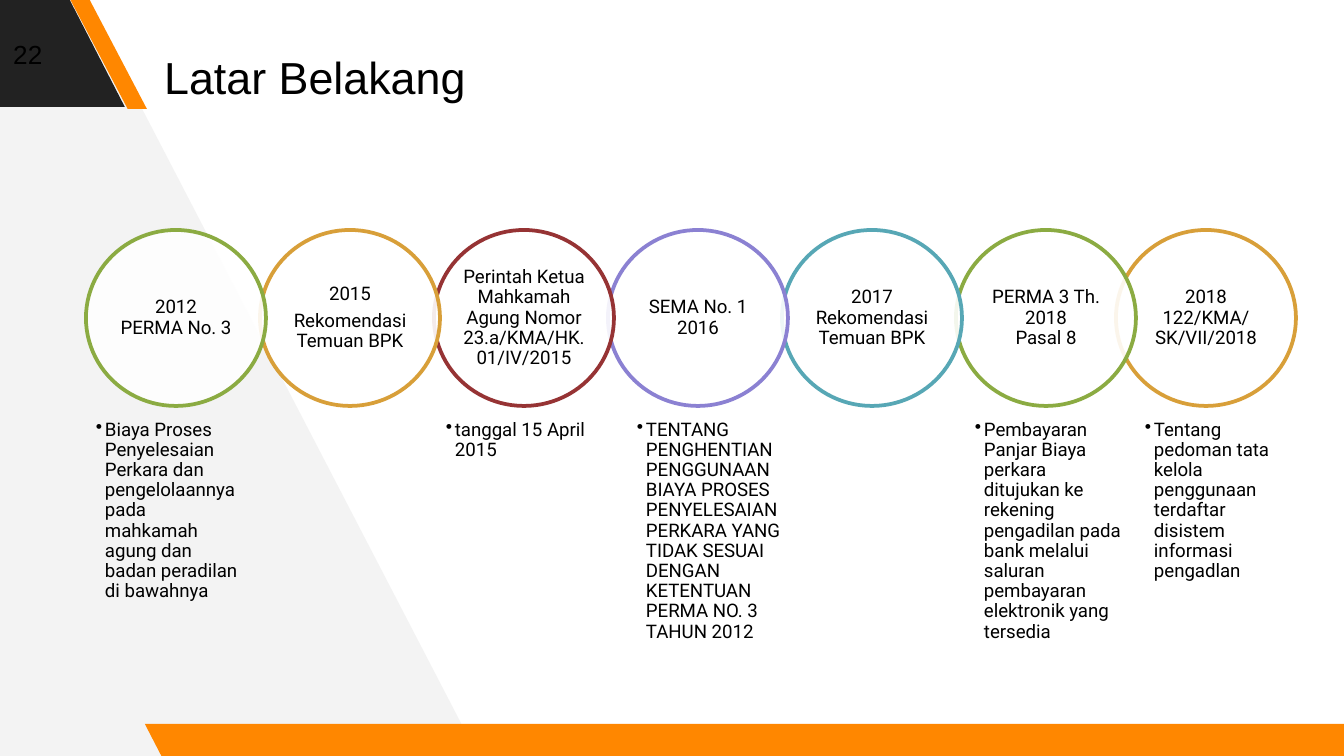
"""Build the "Latar Belakang" timeline slide."""
from lxml.etree import SubElement
from pptx import Presentation
from pptx.dml.color import RGBColor
from pptx.enum.shapes import MSO_SHAPE
from pptx.enum.text import MSO_ANCHOR, PP_ALIGN
from pptx.oxml.ns import qn
from pptx.util import Emu, Pt

SCALE = 914400 / 134.4
COLORS = {
    "white": "FFFFFF", "black": "000000", "pale": "F3F3F3", "dark": "222222",
    "orange": "FF8700", "green": "8BAB42", "gold": "D89F39", "red": "963334",
    "violet": "8B81D2", "teal": "57A7B5",
}
BACKDROP = [(478, 756), (83, -5), (-8, -5), (-3, 761)]
BANDS = [
    ((-133, -3, 258, 110), 0.515, "dark"),
    ((70, -1, 77, 110), 0.75, "orange"),
    ((145, 724, 1230, 34), 0.515, "orange"),
]
STAGES = [
    ("green", "2012\vPERMA No. 3", 91,
     "Biaya Proses Penyelesaian Perkara dan pengelolaannya pada "
     "mahkamah agung dan badan peradilan di bawahnya"),
    ("gold", "2015\nRekomendasi Temuan BPK", None, None),
    ("red", "Perintah Ketua Mahkamah Agung Nomor 23.a/KMA/HK.01/IV/2015", 441,
     "tanggal 15 April 2015"),
    ("violet", "SEMA No. 1 2016", 632,
     "TENTANG PENGHENTIAN PENGGUNAAN BIAYA PROSES PENYELESAIAN PERKARA "
     "YANG TIDAK SESUAI DENGAN KETENTUAN PERMA NO. 3 TAHUN 2012"),
    ("teal", "2017\vRekomendasi Temuan BPK", None, None),
    ("green", "PERMA 3 Th. 2018\vPasal 8", 970,
     "Pembayaran Panjar Biaya perkara ditujukan ke rekening pengadilan pada "
     "bank melalui saluran pembayaran elektronik yang tersedia"),
    ("gold", "2018\v122/KMA/SK/VII/2018", 1140,
     "Tentang pedoman tata kelola penggunaan terdaftar disistem "
     "informasi pengadlan"),
]
FIRST_LEFT, PITCH, LAST_LEFT = 86, 174, 1116
CIRCLE_TOP, CIRCLE_WIDTH, CIRCLE_HEIGHT = 230, 180, 176
LABEL_INSET_X, LABEL_INSET_Y = 26, 25
NOTE_TOP, NOTE_WIDTH, NOTE_HEIGHT, NOTE_INDENT = 415, 157, 93, 9


def px(length):
    return Emu(round(length * SCALE))


def rgb(color):
    return RGBColor.from_string(COLORS[color])


def paint(shape, fill, outline=None):
    shape.shadow.inherit = False
    shape.fill.solid()
    shape.fill.fore_color.rgb = rgb(fill)
    if outline:
        shape.line.color.rgb = rgb(outline)
        shape.line.width = Pt(2)
    else:
        shape.line.fill.background()


def add_preset(slide, kind, box, fill, outline=None):
    shape = slide.shapes.add_shape(kind, *map(px, box))
    paint(shape, fill, outline)
    return shape


def add_text(slide, box, text, font, size, inset=None):
    frame = slide.shapes.add_textbox(*map(px, box)).text_frame
    frame.word_wrap = True
    if inset is not None:
        frame.margin_left = frame.margin_right = px(inset)
        frame.margin_top = frame.margin_bottom = px(inset)
    frame.text = text
    for paragraph in frame.paragraphs:
        for run in paragraph.runs:
            run.font.name = font
            run.font.size = Pt(size)
            run.font.color.rgb = rgb("black")
    return frame


def add_background(slide):
    builder = slide.shapes.build_freeform(*BACKDROP[0], scale=SCALE)
    builder.add_line_segments(BACKDROP[1:], close=True)
    paint(builder.convert_to_shape(), "pale")
    for box, slant, color in BANDS:
        band = add_preset(slide, MSO_SHAPE.PARALLELOGRAM, box, color)
        band.adjustments[0] = slant
        band.element.spPr.xfrm.set("flipH", "1")


def add_circle(slide, left, color, label):
    box = (left, CIRCLE_TOP, CIRCLE_WIDTH, CIRCLE_HEIGHT)
    circle = add_preset(slide, MSO_SHAPE.OVAL, box, "white", color)
    fill_color = circle.element.spPr.find(qn("a:solidFill"))[0]
    SubElement(fill_color, qn("a:alpha"), val="90000")
    label_box = (left + LABEL_INSET_X, CIRCLE_TOP + LABEL_INSET_Y,
                 CIRCLE_WIDTH - 2 * LABEL_INSET_X, CIRCLE_HEIGHT - 2 * LABEL_INSET_Y)
    frame = add_text(slide, label_box, label, "Roboto", 10, 1)
    frame.vertical_anchor = MSO_ANCHOR.MIDDLE
    for paragraph in frame.paragraphs:
        paragraph.alignment = PP_ALIGN.CENTER
        paragraph.line_spacing = 0.9
        paragraph.space_after = Pt(3.5)


def add_note(slide, left, note):
    box = (left, NOTE_TOP, NOTE_WIDTH, NOTE_HEIGHT)
    paragraph = add_text(slide, box, note, "Roboto", 10, 5).paragraphs[0]
    paragraph.line_spacing = 0.9
    paragraph.space_after = Pt(1.5)
    properties = paragraph._p.get_or_add_pPr()
    properties.set("marL", str(px(NOTE_INDENT)))
    properties.set("indent", str(px(-NOTE_INDENT)))
    SubElement(properties, qn("a:buChar"), char="•")


def main():
    deck = Presentation()
    deck.slide_width, deck.slide_height = px(1344), px(756)
    slide = deck.slides.add_slide(deck.slide_layouts[6])
    add_background(slide)
    lefts = [FIRST_LEFT + PITCH * i for i in range(len(STAGES) - 1)] + [LAST_LEFT]
    for left, (color, label, note_left, note) in reversed(list(zip(lefts, STAGES))):
        add_circle(slide, left, color, label)
        if note:
            add_note(slide, note_left, note)
    add_text(slide, (151, 43, 641, 67), "Latar Belakang", "Arial", 24)
    add_text(slide, (0, 32, 70, 44), "22", "Arial", 14)
    deck.save("out.pptx")


if __name__ == "__main__":
    main()
